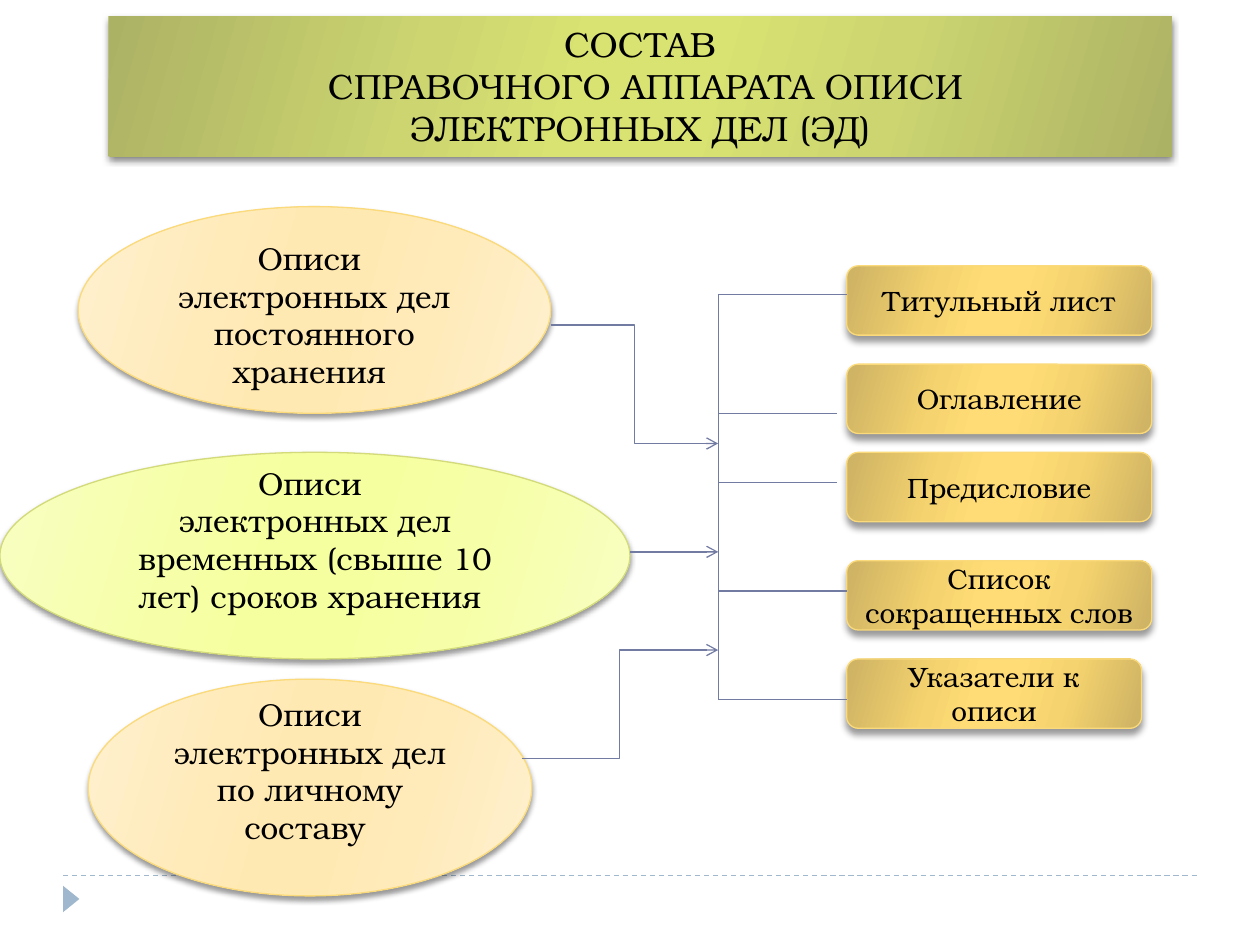
from dataclasses import dataclass

from lxml.etree import SubElement
from pptx import Presentation
from pptx.dml.color import RGBColor
from pptx.enum.dml import MSO_LINE_DASH_STYLE as Dash
from pptx.enum.shapes import MSO_CONNECTOR as Connector
from pptx.enum.shapes import MSO_SHAPE as Shape
from pptx.enum.text import MSO_ANCHOR as Anchor
from pptx.enum.text import PP_ALIGN as Align
from pptx.oxml.ns import qn
from pptx.util import Inches, Pt

FONT = "TeX Gyre Bonum"
COLORS = {
    "text": "000000",
    "shadow": "000000",
    "footer": "9FB8CD",
    "connector": "727CA3",
    "gold_line": "FADA7A",
    "lime_line": "D2DA7A",
}
# Edge, shoulder and centre colour of each mirrored gradient
GRADIENTS = {
    "olive": ("ACB264", "CCD570", "D9E371"),
    "cream": ("FFF0CF", "FFEBBA", "FFE9B3"),
    "lime": ("F8FEC2", "F6FFA7", "F6FF9F"),
    "gold": ("CDB264", "F5D36E", "FFDC75"),
}
GRADIENT_POSITIONS = (0, 30, 45, 55, 73, 100)
TRUNK_X = 5.7
PART_LEFT = 6.72


@dataclass
class Shadow:
    opacity: int
    blur: float
    distance: float


@dataclass
class Box:
    kind: Shape
    left: float
    top: float
    width: float
    height: float
    lines: tuple[str, ...]
    size: int
    gradient: str
    shadow: Shadow
    outline: str | None = None
    anchor: Anchor = Anchor.MIDDLE
    top_inset: float = 0.05
    bottom_inset: float = 0.05


@dataclass
class Link:
    start: tuple[float, float]
    end: tuple[float, float]
    arrow: bool = False
    kind: Connector = Connector.STRAIGHT


TITLE_SHADOW = Shadow(50, 4, 2)
LIST_SHADOW = Shadow(40, 3, 2)
PART_SHADOW = Shadow(40, 4, 3.4)

TITLE = Box(Shape.RECTANGLE, 0.86, 0.13, 8.44, 1.11,
            ("СОСТАВ", " СПРАВОЧНОГО АППАРАТА ОПИСИ", "ЭЛЕКТРОННЫХ ДЕЛ (ЭД)"),
            20, "olive", TITLE_SHADOW, anchor=Anchor.TOP)
INVENTORIES = [
    Box(Shape.OVAL, 0.62, 1.64, 3.75, 1.64,
        ("Описи ", "электронных дел", "постоянного хранения "),
        18, "cream", LIST_SHADOW, "gold_line", top_inset=0.12),
    Box(Shape.OVAL, 0, 3.59, 5, 1.64,
        ("Описи ", "электронных дел временных (свыше 10 лет) сроков хранения "),
        18, "lime", LIST_SHADOW, "lime_line", bottom_inset=0.31),
    Box(Shape.OVAL, 0.7, 5.39, 3.52, 1.72,
        ("Описи", "электронных дел", "по личному составу "),
        18, "cream", LIST_SHADOW, "gold_line", bottom_inset=0.32),
]
PARTS = [
    Box(Shape.ROUNDED_RECTANGLE, PART_LEFT, top, width, 0.55, (name,),
        16, "gold", PART_SHADOW, "gold_line")
    for name, top, width in (
        ("Титульный лист", 2.11, 2.42),
        ("Оглавление", 2.89, 2.42),
        ("Предисловие", 3.59, 2.42),
        ("Список сокращенных слов", 4.45, 2.42),
        ("Указатели к описи", 5.23, 2.34),
    )
]
BRANCHES = ((2.34, PART_LEFT), (3.28, 6.64), (3.83, 6.64),
            (4.69, PART_LEFT), (5.55, PART_LEFT))
LINKS = [
    Link((TRUNK_X, BRANCHES[0][0]), (TRUNK_X, BRANCHES[-1][0])),
    *(Link((TRUNK_X, y), (right, y)) for y, right in BRANCHES),
    Link((4.37, 2.58), (TRUNK_X, 3.52), True, Connector.ELBOW),
    Link((5, 4.38), (TRUNK_X, 4.38), True),
    Link((4.14, 6.02), (TRUNK_X, 5.16), True, Connector.ELBOW),
]


def rgb(name: str) -> RGBColor:
    return RGBColor.from_string(COLORS[name])


def fill_gradient(shape, name: str) -> None:
    shape.fill.gradient()
    shape.fill.gradient_angle = 344  # counter-clockwise
    stops = shape._element.spPr.find(qn("a:gradFill")).find(qn("a:gsLst"))
    for stop in list(stops):
        stops.remove(stop)
    colors = GRADIENTS[name]
    mirrored = (colors[0], colors[1], colors[2], colors[2], colors[1], colors[0])
    for position, color in zip(GRADIENT_POSITIONS, mirrored):
        stop = SubElement(stops, qn("a:gs"), pos=str(position * 1000))
        SubElement(stop, qn("a:srgbClr"), val=color)


def cast_shadow(shape, shadow: Shadow) -> None:
    shape.shadow.inherit = False
    effects = shape._element.spPr.find(qn("a:effectLst"))
    outer = SubElement(effects, qn("a:outerShdw"), blurRad=str(Pt(shadow.blur)),
                       dist=str(Pt(shadow.distance)), dir="5400000",
                       algn="ctr", rotWithShape="0")
    color = SubElement(outer, qn("a:srgbClr"), val=COLORS["shadow"])
    SubElement(color, qn("a:alpha"), val=str(shadow.opacity * 1000))


def write_lines(shape, box: Box) -> None:
    frame = shape.text_frame
    frame.word_wrap = True
    frame.vertical_anchor = box.anchor
    frame.margin_top = Inches(box.top_inset)
    frame.margin_bottom = Inches(box.bottom_inset)
    for index, line in enumerate(box.lines):
        paragraph = frame.add_paragraph() if index else frame.paragraphs[0]
        paragraph.alignment = Align.CENTER
        run = paragraph.add_run()
        run.text = line
        run.font.name = FONT
        run.font.size = Pt(box.size)
        run.font.color.rgb = rgb("text")


def draw_box(slide, box: Box) -> None:
    shape = slide.shapes.add_shape(box.kind, Inches(box.left), Inches(box.top),
                                   Inches(box.width), Inches(box.height))
    fill_gradient(shape, box.gradient)
    if box.outline:
        shape.line.color.rgb = rgb(box.outline)
        shape.line.width = Pt(0.75)
    else:
        shape.line.fill.background()
    cast_shadow(shape, box.shadow)
    write_lines(shape, box)


def draw_link(slide, link: Link, color: str = "connector"):
    connector = slide.shapes.add_connector(
        link.kind, *(Inches(value) for value in link.start + link.end))
    connector.line.color.rgb = rgb(color)
    connector.line.width = Pt(0.75)
    if link.arrow:
        SubElement(connector.line._get_or_add_ln(), qn("a:tailEnd"), type="arrow")
    SubElement(connector._element.spPr, qn("a:effectLst"))
    return connector


def draw_footer(slide) -> None:
    rule = draw_link(slide, Link((0.5, 6.95), (9.5, 6.95)), "footer")
    rule.line.dash_style = Dash.DASH
    marker = slide.shapes.add_shape(Shape.ISOSCELES_TRIANGLE, Inches(0.46),
                                    Inches(7.07), Inches(0.21), Inches(0.13))
    marker.rotation = 90
    marker.shadow.inherit = False
    marker.fill.solid()
    marker.fill.fore_color.rgb = rgb("footer")
    marker.line.fill.background()


def main() -> None:
    presentation = Presentation()
    presentation.slide_width = Inches(10)
    presentation.slide_height = Inches(7.5)
    slide = presentation.slides.add_slide(presentation.slide_layouts[6])
    draw_footer(slide)
    for box in (TITLE, *INVENTORIES, *PARTS):
        draw_box(slide, box)
    for link in LINKS:
        draw_link(slide, link)
    presentation.save("out.pptx")


if __name__ == "__main__":
    main()
